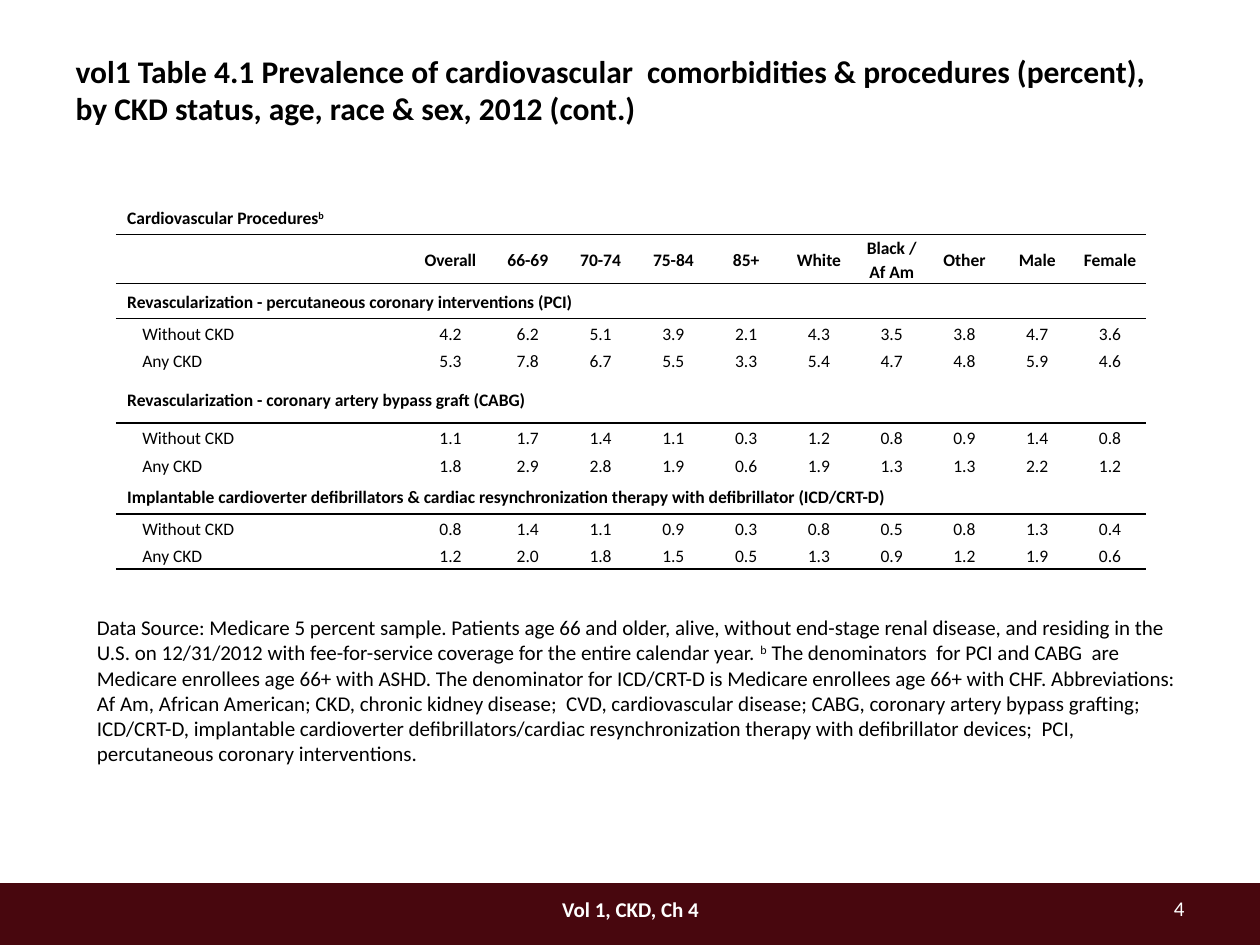
from lxml import etree
from pptx import Presentation
from pptx.dml.color import RGBColor
from pptx.enum.shapes import MSO_SHAPE
from pptx.enum.text import MSO_ANCHOR, MSO_AUTO_SIZE, PP_ALIGN
from pptx.oxml.ns import qn
from pptx.util import Inches, Pt

BLACK = RGBColor(0x00, 0x00, 0x00)
WHITE = RGBColor(0xFF, 0xFF, 0xFF)
MAROON = RGBColor(0x48, 0x07, 0x0E)
RECTANGLE = MSO_SHAPE.RECTANGLE
MIDDLE = MSO_ANCHOR.MIDDLE
FIT_SHAPE = MSO_AUTO_SIZE.SHAPE_TO_FIT_TEXT
LEFT, CENTER, RIGHT = PP_ALIGN.LEFT, PP_ALIGN.CENTER, PP_ALIGN.RIGHT

FONT = "Calibri"
TABLE_SIZE = 10
TITLE = ("vol1 Table 4.1 Prevalence of cardiovascular  comorbidities & procedures "
         "(percent), by CKD status, age, race & sex, 2012 (cont.)")
TABLE_CAPTION = "Cardiovascular Procedures"
GROUPS = ["Overall", "66-69", "70-74", "75-84", "85+", "White",
          "Black /\vAf Am", "Other", "Male", "Female"]
# Heading, columns it spans, height, rates without CKD, rates with any CKD
PROCEDURES = [
    ("Revascularization - percutaneous coronary interventions (PCI)", 11, 0.28,
     "4.2 6.2 5.1 3.9 2.1 4.3 3.5 3.8 4.7 3.6",
     "5.3 7.8 6.7 5.5 3.3 5.4 4.7 4.8 5.9 4.6"),
    ("Revascularization - coronary artery bypass graft (CABG)", 3, 0.39,
     "1.1 1.7 1.4 1.1 0.3 1.2 0.8 0.9 1.4 0.8",
     "1.8 2.9 2.8 1.9 0.6 1.9 1.3 1.3 2.2 1.2"),
    ("Implantable cardioverter defibrillators & cardiac resynchronization "
     "therapy with defibrillator (ICD/CRT-D)", 11, 0.28,
     "0.8 1.4 1.1 0.9 0.3 0.8 0.5 0.8 1.3 0.4",
     "1.2 2.0 1.8 1.5 0.5 1.3 0.9 1.2 1.9 0.6"),
]
SOURCE_NOTE = [
    "Data Source: Medicare 5 percent sample. Patients age 66 and older, alive, without "
    "end-stage renal disease, and residing in the U.S. on 12/31/2012 with fee-for-service "
    "coverage for the entire calendar year. ",
    "b",
    " The denominators  for PCI and CABG  are Medicare enrollees age 66+ with ASHD. The "
    "denominator for ICD/CRT-D is Medicare enrollees age 66+ with CHF. Abbreviations: "
    "Af Am, African American; CKD, chronic kidney disease;  CVD, cardiovascular disease; "
    "CABG, coronary artery bypass grafting; ICD/CRT-D, implantable cardioverter "
    "defibrillators/cardiac resynchronization therapy with defibrillator devices;  PCI, "
    "percutaneous coronary interventions.",
]


def format_runs(paragraph, size, color=BLACK, bold=False, align=LEFT):
    paragraph.alignment = align
    for run in paragraph.runs:
        run.font.name = FONT
        run.font.size = Pt(size)
        run.font.bold = bold
        run.font.color.rgb = color


def raise_run(run):
    run.font._element.set("baseline", "30000")


def add_text(slide, box, text, size, color=BLACK, bold=False, align=LEFT):
    frame = slide.shapes.add_textbox(*map(Inches, box)).text_frame
    frame.word_wrap = True
    frame.text = text
    format_runs(frame.paragraphs[0], size, color, bold, align)
    return frame


def add_title(slide, box):
    title = slide.shapes.title
    title.left, title.top, title.width, title.height = map(Inches, box)
    frame = title.text_frame
    frame.text = TITLE
    frame.vertical_anchor = MIDDLE
    frame.auto_size = MSO_AUTO_SIZE.NONE
    format_runs(frame.paragraphs[0], 18, bold=True)


def set_borders(cell, ruled_sides):
    properties = cell._tc.get_or_add_tcPr()
    for side in "LRTB":
        line = etree.SubElement(properties, qn(f"a:ln{side}"), w=str(Pt(1)))
        if side in ruled_sides:
            fill = etree.SubElement(line, qn("a:solidFill"))
            etree.SubElement(fill, qn("a:srgbClr"), val=str(BLACK))
        else:
            etree.SubElement(line, qn("a:noFill"))


def fill_cell(cell, text, bold, align):
    cell.margin_top = cell.margin_bottom = 0
    cell.margin_left = cell.margin_right = Inches(0.08 if bold and align == CENTER else 0.09)
    cell.vertical_anchor = MIDDLE
    cell.fill.background()
    paragraph = cell.text_frame.paragraphs[0]
    paragraph.text = text
    paragraph.line_spacing = 1.15
    format_runs(paragraph, TABLE_SIZE, bold=bold, align=align)
    # Line breaks and empty cells need the table's text size too
    size = str(TABLE_SIZE * 100)
    for line_break in paragraph._p.findall(qn("a:br")):
        etree.SubElement(line_break, qn("a:rPr"), sz=size)
    if not text:
        etree.SubElement(paragraph._p, qn("a:endParaRPr"), sz=size)
    if text.startswith("\t"):
        tabs = etree.SubElement(paragraph._p.get_or_add_pPr(), qn("a:tabLst"))
        etree.SubElement(tabs, qn("a:tab"), pos=str(Inches(0.12)), algn="l")


def procedure_rows():
    """List each row as texts, height, bold, columns spanned, ruled below."""
    rows = [([TABLE_CAPTION], 0.28, True, 11, True),
            ([""] + GROUPS, 0.39, True, 1, True)]
    for heading, span, height, without_ckd, any_ckd in PROCEDURES:
        rows += [([heading], height, True, span, True),
                 (["\tWithout CKD"] + without_ckd.split(), 0.22, False, 1, False),
                 (["\tAny CKD"] + any_ckd.split(), 0.22, False, 1, False)]
    rows[-1] = (*rows[-1][:-1], True)
    return rows


def add_procedure_table(slide, box):
    rows = procedure_rows()
    column_count = len(GROUPS) + 1
    table = slide.shapes.add_table(len(rows), column_count, *map(Inches, box)).table
    table.first_row = table.horz_banding = False

    # The label and Overall columns are wider; the others share the rest
    label_width, overall_width = 2.33, 0.65
    group_width = (box[2] - label_width - overall_width) / (column_count - 2)
    widths = [label_width, overall_width] + [group_width] * (column_count - 2)
    for column, width in zip(table.columns, widths):
        column.width = Inches(width)

    ruled_above = False
    for r, (texts, height, bold, span, ruled_below) in enumerate(rows):
        table.rows[r].height = Inches(height)
        sides = "T" * ruled_above + "B" * ruled_below
        for c in range(column_count):
            cell = table.cell(r, c)
            set_borders(cell, sides)
            fill_cell(cell, texts[c] if c < len(texts) else "", bold, CENTER if c else LEFT)
        if span > 1:
            table.cell(r, 0).merge(table.cell(r, span - 1))
        ruled_above = ruled_below

    # Footnote mark of the caption
    caption = table.cell(0, 0).text_frame.paragraphs[0]
    mark = caption.add_run()
    mark.text = "b"
    format_runs(caption, TABLE_SIZE, bold=True)
    raise_run(mark)


def add_source_note(slide, box):
    frame = add_text(slide, box, SOURCE_NOTE[0], 12)
    frame.auto_size = FIT_SHAPE
    note = frame.paragraphs[0]
    for part in SOURCE_NOTE[1:]:
        note.add_run().text = part
    format_runs(note, 12)
    raise_run(note.runs[1])


def add_footer(slide, box):
    left, top, width, height = box
    band = slide.shapes.add_shape(RECTANGLE, *map(Inches, box))
    band.shadow.inherit = False
    band.fill.solid()
    band.fill.fore_color.rgb = MAROON
    band.line.fill.background()
    chapter = add_text(slide, (left + 3.42, top + 0.07, 3.17, 0.27),
                       "Vol 1, CKD, Ch 4", 12, WHITE, True, CENTER)
    page = add_text(slide, (left + width - 1.75, top + 0.07, 1.25, 0.25),
                    "4", 12, WHITE, False, RIGHT)
    chapter.vertical_anchor = page.vertical_anchor = MIDDLE


def main():
    presentation = Presentation()
    presentation.slide_width, presentation.slide_height = Inches(10), Inches(7.5)
    slide = presentation.slides.add_slide(presentation.slide_layouts[5])
    add_footer(slide, (0, 7.01, 10, 0.5))
    add_title(slide, (0.5, 0.42, 9, 0.58))
    add_procedure_table(slide, (0.92, 1.58, 8.18, 2.94))
    add_source_note(slide, (0.67, 4.83, 8.92, 1.31))
    presentation.save("out.pptx")


if __name__ == "__main__":
    main()
